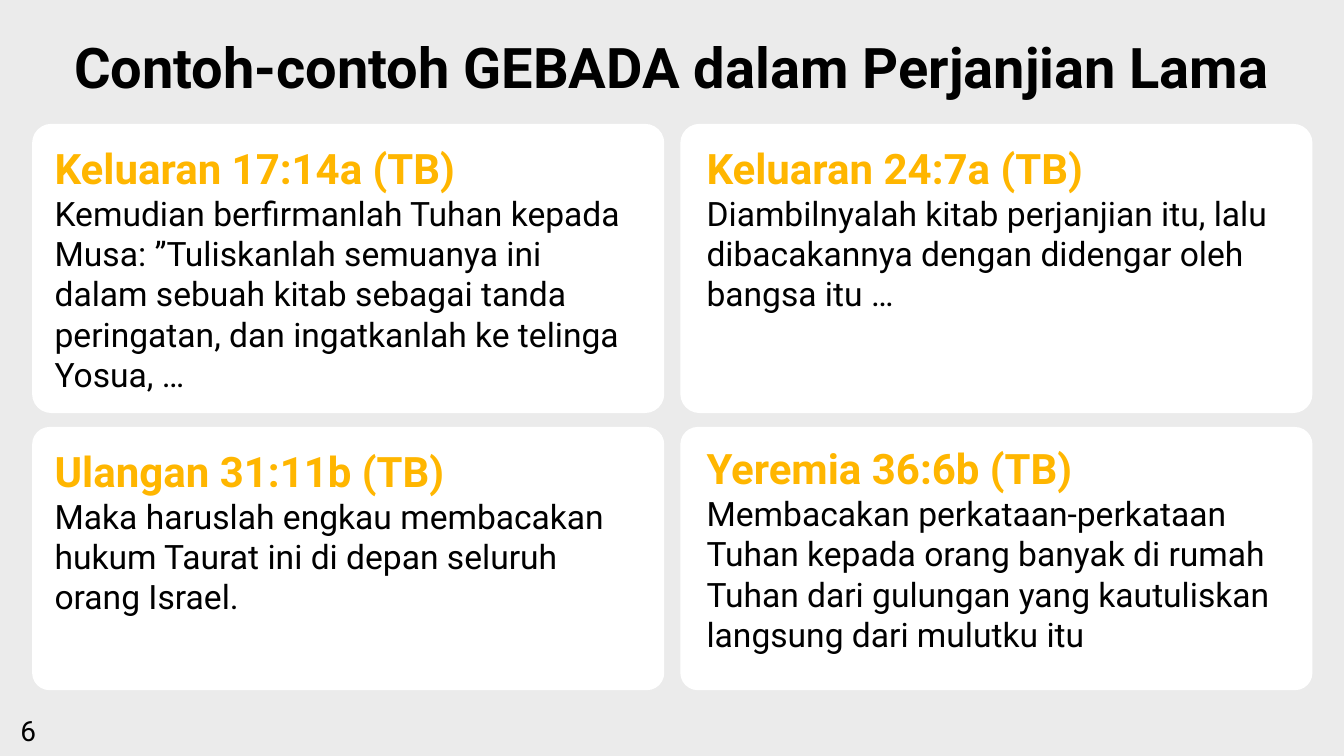
from pptx import Presentation
from pptx.dml.color import RGBColor
from pptx.enum import shapes, text
from pptx.util import Pt

# Content
TITLE = "Contoh-contoh GEBADA dalam Perjanjian Lama"
PAGE = "6"
# Each row of cards: (heading, verse, text width, text inset from card top)
VERSES = [
    [
        ("Keluaran 17:14a (TB)",
         "Kemudian berfirmanlah Tuhan kepada Musa: ”Tuliskanlah semuanya ini "
         "dalam sebuah kitab sebagai tanda peringatan, dan ingatkanlah ke "
         "telinga Yosua, …", 420, 13),
        ("Keluaran 24:7a (TB)",
         "Diambilnyalah kitab perjanjian itu, lalu dibacakannya dengan "
         "didengar oleh bangsa itu …", 415, 13),
    ],
    [
        ("Ulangan 31:11b (TB)",
         "Maka haruslah engkau membacakan hukum Taurat ini di depan seluruh "
         "orang Israel.", 403, 13),
        ("Yeremia 36:6b (TB)",
         "Membacakan perkataan-perkataan Tuhan kepada orang banyak di rumah "
         "Tuhan dari gulungan yang kautuliskan langsung dari mulutku itu",
         423, 11),
    ],
]

# Theme and layout, in points
THEME = {
    "font": "Roboto", "back": "EBEBEB", "card": "FFFFFF",
    "ink": "000000", "gold": "FFB600",
    "title": 40, "head": 30, "verse": 24, "page": 20,
}
WIDE, HIGH = 960, 540
LEFT, TOP, CARD = 23, 88.5, 451.5
GAP_X, GAP_Y = 11.5, 10
ROWS = [206.5, 188]
PADS = [16, 18.7]
ROUND = 0.066


def color(name):
    return RGBColor.from_string(THEME[name])


def write(slide, box, lines, align=text.PP_ALIGN.LEFT):
    """Add a text box; each line is (words, size name, color name, bold)."""
    frame = slide.shapes.add_textbox(*map(Pt, box)).text_frame
    frame.word_wrap = True
    frame.margin_left = frame.margin_right = 0
    frame.margin_top = frame.margin_bottom = 0
    frame.text = "\n".join(line[0] for line in lines)
    for para, (_, size, ink, bold) in zip(frame.paragraphs, lines):
        para.alignment = align
        font = para.runs[0].font
        font.name, font.size, font.bold = THEME["font"], Pt(THEME[size]), bold
        font.color.rgb = color(ink)


def card(slide, box):
    shape = slide.shapes.add_shape(
        shapes.MSO_SHAPE.ROUNDED_RECTANGLE, *map(Pt, box))
    shape.adjustments[0] = ROUND
    shape.shadow.inherit = False
    shape.fill.solid()
    shape.fill.fore_color.rgb = color("card")
    shape.line.fill.background()


def main():
    deck = Presentation()
    deck.slide_width, deck.slide_height = Pt(WIDE), Pt(HIGH)
    slide = deck.slides.add_slide(deck.slide_layouts[6])
    slide.background.fill.solid()
    slide.background.fill.fore_color.rgb = color("back")

    # Page number and title
    write(slide, (14.5, 510, 80, 24.5), [(PAGE, "page", "ink", False)])
    write(slide, (18, 23, 923, 48), [(TITLE, "title", "ink", True)],
          text.PP_ALIGN.CENTER)

    # Verse cards, two by two
    top = TOP
    for row, high in zip(VERSES, ROWS):
        for col, (head, verse, wide, inset) in enumerate(row):
            left = LEFT + col * (CARD + GAP_X)
            card(slide, (left, top, CARD, high))
            write(slide,
                  (left + PADS[col], top + inset, wide, high - 2 * inset),
                  [(head, "head", "gold", True),
                   (verse, "verse", "ink", False)])
        top += high + GAP_Y

    deck.save("out.pptx")


if __name__ == "__main__":
    main()
